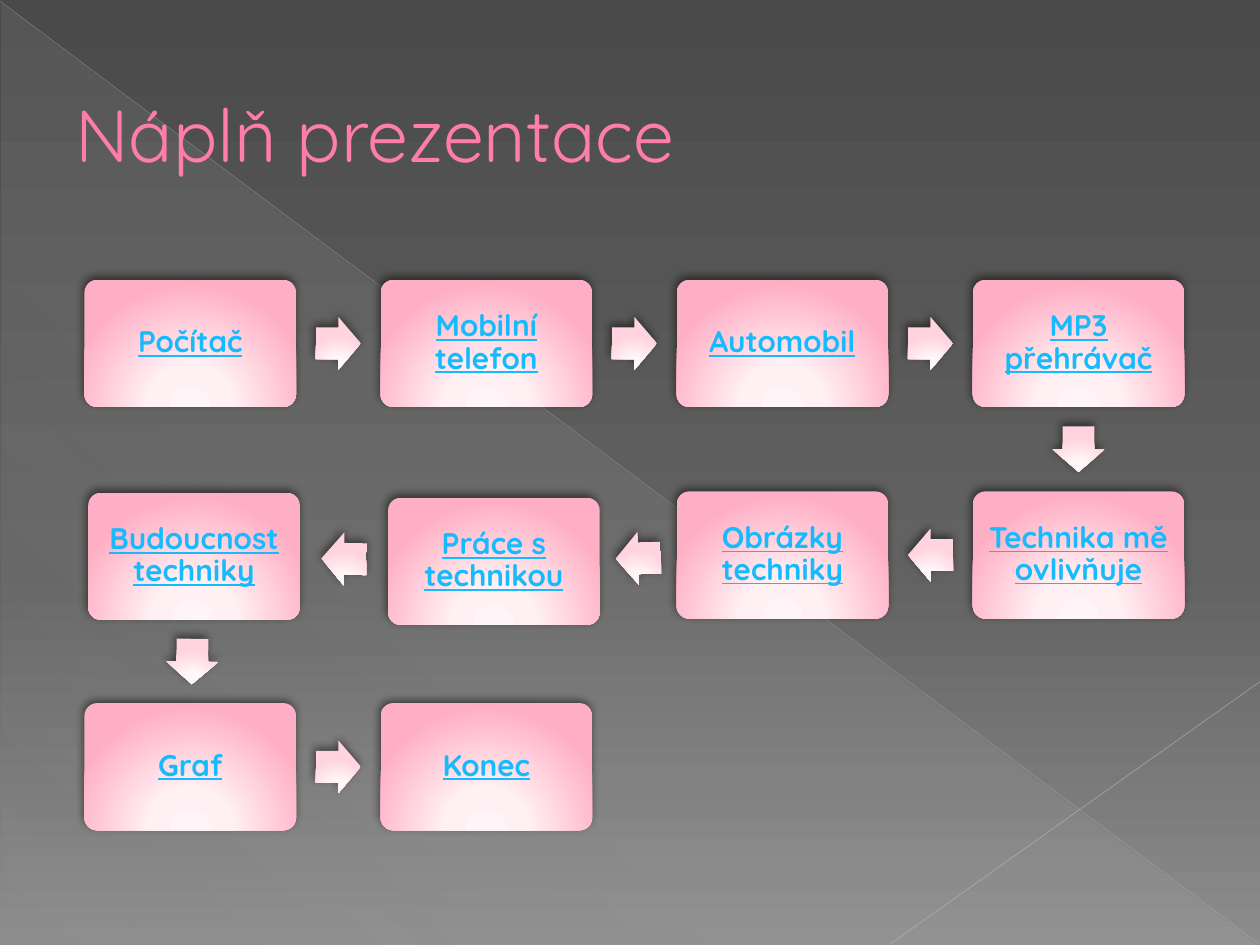
from math import atan2, degrees

from lxml.etree import SubElement
from pptx import Presentation
from pptx.dml.color import RGBColor
from pptx.enum.shapes import MSO_CONNECTOR, MSO_SHAPE
from pptx.enum.text import MSO_ANCHOR, PP_ALIGN
from pptx.oxml.ns import qn
from pptx.util import Inches, Pt

FONT = "Quicksand"
COLORS = {
    "title": "FF7DA7", "link": "17BBFD", "shadow": "000000",
    "long": "BFBFBF", "short": "C6C6C6",
}
# Gradient stops: position %, colour, opacity %
BACK = [(0, "4A4A4A", 100), (60, "626262", 100), (100, "8C8C8C", 100)]
SHEEN = [(0, "D2D2D2", 10), (70, "D2D2D2", 8), (100, "D2D2D2", 1)]
CARD = [(0, "FFF4F7", 100), (34, "FFF0F3", 100), (100, "FFAFC5", 100)]
ARROW = [(0, "FFF8FA", 100), (34, "FFF6F8", 100), (100, "FFD4DE", 100)]

LEFT, TOP, STEP_X, STEP_Y = 0.67, 2.22, 2.35, 1.68
CARD_W, CARD_H = 1.68, 1.01
ARROW_W, ARROW_H = 0.36, 0.42

# Label, column, row, shift from the grid
STEPS = [
    ("Počítač", 0, 0, 0, 0),
    ("Mobilní telefon", 1, 0, 0, 0),
    ("Automobil", 2, 0, 0, 0),
    ("MP3 přehrávač", 3, 0, 0, 0),
    ("Technika mě ovlivňuje", 3, 1, 0, 0),
    ("Obrázky techniky", 2, 1, 0, 0),
    ("Práce s technikou", 1, 1, 0.06, 0.05),
    ("Budoucnost techniky", 0, 1, 0.03, 0.01),
    ("Graf", 0, 2, 0, 0),
    ("Konec", 1, 2, 0, 0),
]


def add(parent, tag, **attrs):
    return SubElement(parent, qn(tag), {k: str(v) for k, v in attrs.items()})


def tint(parent, color, alpha):
    node = add(parent, "a:srgbClr", val=color)
    if alpha < 100:
        add(node, "a:alpha", val=alpha * 1000)


def shade(props, stops, angle=None):
    """Swap the solid fill for a gradient: linear at an angle, else circular."""
    solid = props.find(qn("a:solidFill"))
    grad = add(props, "a:gradFill", rotWithShape=0)
    props.replace(solid, grad)
    group = add(grad, "a:gsLst")
    for pos, color, alpha in stops:
        tint(add(group, "a:gs", pos=pos * 1000), color, alpha)
    if angle is None:
        ring = add(grad, "a:path", path="circle")
        add(ring, "a:fillToRect", l=50000, t=155000, r=50000, b=-55000)
    else:
        add(grad, "a:lin", ang=angle * 60000, scaled=0)


class Deck:
    def __init__(self):
        self.show = Presentation()
        self.show.slide_width, self.show.slide_height = Inches(10), Inches(7.5)
        self.slide = self.show.slides.add_slide(self.show.slide_layouts[6])
        self.shapes = self.slide.shapes

    def back(self, stops):
        self.slide.background.fill.solid()
        shade(self.slide.element.find(".//" + qn("p:bgPr")), stops, 90)

    def shape(self, kind, box, stops, angle=None, adjust=(), shadow=True):
        item = self.shapes.add_shape(kind, *map(Inches, box))
        for i, value in enumerate(adjust):
            item.adjustments[i] = value
        item.fill.solid()
        item.line.fill.background()
        item.shadow.inherit = False
        props = item.element.spPr
        shade(props, stops, angle)
        if shadow:
            cast = add(props.find(qn("a:effectLst")), "a:outerShdw",
                       blurRad=Pt(5), dist=Pt(2), dir=245 * 60000, rotWithShape=0)
            tint(cast, COLORS["shadow"], 50)
        return item

    def line(self, start, end, color, width, alpha):
        item = self.shapes.add_connector(
            MSO_CONNECTOR.STRAIGHT, *map(Inches, start + end))
        item.line.width = Pt(width)
        item.line.color.rgb = RGBColor.from_string(COLORS[color])
        props = item.element.spPr
        add(props.find(".//" + qn("a:srgbClr")), "a:alpha", val=alpha * 1000)
        add(props, "a:effectLst")

    def label(self, item, text, size, color, align):
        frame = item.text_frame
        frame.word_wrap = True
        frame.vertical_anchor = MSO_ANCHOR.MIDDLE
        para = frame.paragraphs[0]
        para.text, para.alignment = text, align
        para.font.name, para.font.size = FONT, Pt(size)
        para.font.color.rgb = RGBColor.from_string(COLORS[color])
        return frame, para

    def title(self, text):
        item = self.shapes.add_textbox(*map(Inches, (0.5, 0.29, 9, 1.53)))
        self.label(item, text, 42, "title", PP_ALIGN.LEFT)

    def card(self, text, x, y):
        item = self.shape(MSO_SHAPE.ROUNDED_RECTANGLE,
                          (x, y, CARD_W, CARD_H), CARD, adjust=[0.1])
        frame, para = self.label(item, text, 17, "link", PP_ALIGN.CENTER)
        frame.margin_left = frame.margin_right = Inches(0.04)
        frame.margin_top = frame.margin_bottom = Inches(0.04)
        para.line_spacing = 0.9
        para.font.bold = para.font.underline = True

    def arrow(self, start, end):
        """Put an arrow midway between two cards, turned towards the second."""
        (x1, y1), (x2, y2) = start, end
        x = (x1 + x2 + CARD_W - ARROW_W) / 2
        y = (y1 + y2 + CARD_H - ARROW_H) / 2
        item = self.shape(MSO_SHAPE.RIGHT_ARROW, (x, y, ARROW_W, ARROW_H),
                          ARROW, adjust=[0.6, 0.5])
        item.rotation = degrees(atan2(y2 - y1, x2 - x1))


def main():
    deck = Deck()
    deck.back(BACK)
    deck.shape(MSO_SHAPE.RIGHT_TRIANGLE, (0.01, 0.02, 9.98, 7.48), SHEEN,
               angle=133, shadow=False)
    deck.line((0, 0.01), (9.99, 7.49), "long", 0.39, 35)
    deck.line((10, 5.41), (7.07, 7.49), "short", 0.47, 45)
    deck.title("Náplň prezentace")

    last = None
    for text, col, row, dx, dy in STEPS:
        spot = (LEFT + col * STEP_X + dx, TOP + row * STEP_Y + dy)
        if last:
            deck.arrow(last, spot)
        deck.card(text, *spot)
        last = spot
    deck.show.save("out.pptx")


if __name__ == "__main__":
    main()
